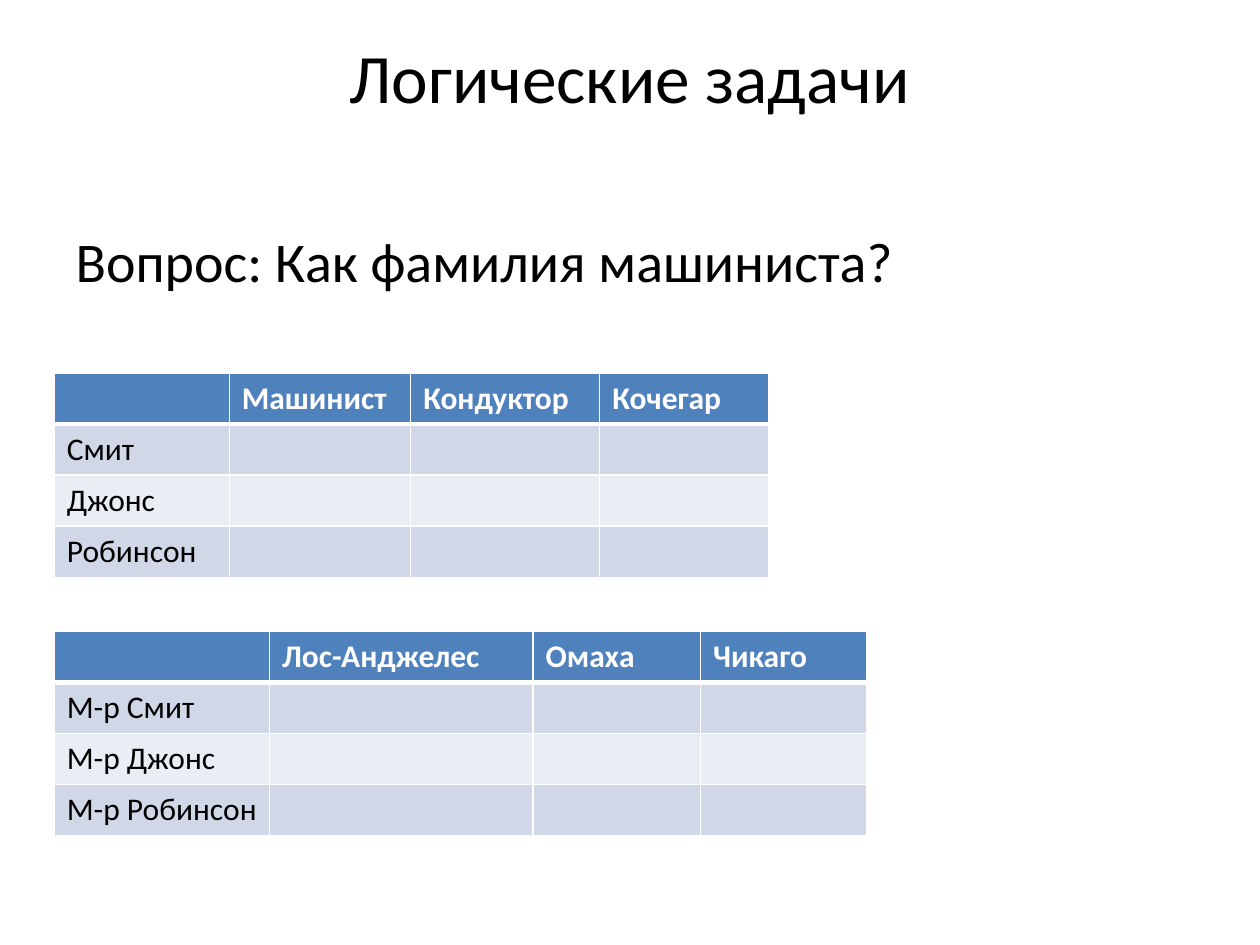
from dataclasses import dataclass

from lxml import etree
from pptx import Presentation
from pptx.dml.color import RGBColor
from pptx.enum.text import MSO_ANCHOR, MSO_AUTO_SIZE, PP_ALIGN
from pptx.oxml.ns import qn
from pptx.util import Inches, Pt

CENTER = PP_ALIGN.CENTER
MIDDLE = MSO_ANCHOR.MIDDLE
NO_AUTOFIT = MSO_AUTO_SIZE.NONE


@dataclass(frozen=True)
class Theme:
    font: str = "Calibri"
    text: str = "000000"
    header_text: str = "FFFFFF"
    header_fill: str = "4F81BD"
    bands: tuple = ("D0D8E8", "E9EDF4")
    border: str = "FFFFFF"
    title_size: float = 39.6
    body_size: float = 32
    table_size: float = 18
    thin: float = 1
    thick: float = 3


THEME = Theme()


def place(sp, box):
    sp.left, sp.top, sp.width, sp.height = (Inches(v) for v in box)


def style(p, size, color, bold=False):
    p.font.name = THEME.font
    p.font.size = Pt(size)
    p.font.bold = bold
    p.font.color.rgb = RGBColor.from_string(color)


def add_title(slide, box, text):
    sp = slide.shapes.title
    place(sp, box)
    tf = sp.text_frame
    tf.auto_size = NO_AUTOFIT
    tf.vertical_anchor = MIDDLE
    tf.margin_top = 0
    tf.margin_bottom = Inches(0.65)
    p = tf.paragraphs[0]
    p.text = text
    p.alignment = CENTER
    style(p, THEME.title_size, THEME.text)


def add_question(slide, box, text):
    sp = slide.placeholders[1]
    place(sp, box)
    tf = sp.text_frame
    tf.auto_size = NO_AUTOFIT
    p = tf.paragraphs[0]
    p.text = text
    style(p, THEME.body_size, THEME.text)
    pPr = p._p.get_or_add_pPr()
    pPr.set("marL", str(Inches(0.38)))
    pPr.set("indent", str(Inches(-0.38)))
    pPr.insert(0, etree.Element(qn("a:buNone")))


def set_borders(cell, top, bottom):
    tcPr = cell._tc.get_or_add_tcPr()
    widths = {"L": THEME.thin, "R": THEME.thin, "T": top, "B": bottom}
    for i, (side, width) in enumerate(widths.items()):
        ln = etree.Element(qn(f"a:ln{side}"), w=str(Pt(width)))
        fill = etree.SubElement(ln, qn("a:solidFill"))
        etree.SubElement(fill, qn("a:srgbClr"), val=THEME.border)
        tcPr.insert(i, ln)


def add_logic_table(slide, box, widths, headers, names):
    rows = [["", *headers]] + [[name] + [""] * len(headers) for name in names]
    left, top, width, height = (Inches(v) for v in box)
    table = slide.shapes.add_table(
        len(rows), len(widths), left, top, width, height
    ).table
    for col, w in zip(table.columns, widths):
        col.width = Inches(w)
    for i, row in enumerate(rows):
        header = i == 0
        fill = THEME.header_fill if header else THEME.bands[(i - 1) % 2]
        color = THEME.header_text if header else THEME.text
        for j, text in enumerate(row):
            cell = table.cell(i, j)
            cell.fill.solid()
            cell.fill.fore_color.rgb = RGBColor.from_string(fill)
            set_borders(
                cell,
                THEME.thick if i == 1 else THEME.thin,
                THEME.thick if header else THEME.thin,
            )
            p = cell.text_frame.paragraphs[0]
            p.text = text
            style(p, THEME.table_size, color, header)


def main():
    prs = Presentation()
    prs.slide_width, prs.slide_height = Inches(10), Inches(7.5)
    slide = prs.slides.add_slide(prs.slide_layouts[1])

    add_title(slide, (0.5, 0.3, 9, 1.25), "Логические задачи")
    add_question(slide, (0.5, 1.75, 9, 4.95), "Вопрос: Как фамилия машиниста?")

    surnames = ["Смит", "Джонс", "Робинсон"]
    add_logic_table(
        slide, (0.43, 2.96, 5.67, 1.62), (1.39, 1.44, 1.5, 1.34),
        ["Машинист", "Кондуктор", "Кочегар"], surnames,
    )
    add_logic_table(
        slide, (0.43, 5.01, 6.45, 1.62), (1.71, 2.09, 1.33, 1.32),
        ["Лос-Анджелес", "Омаха", "Чикаго"],
        [f"М-р {name}" for name in surnames],
    )
    prs.save("out.pptx")


if __name__ == "__main__":
    main()
